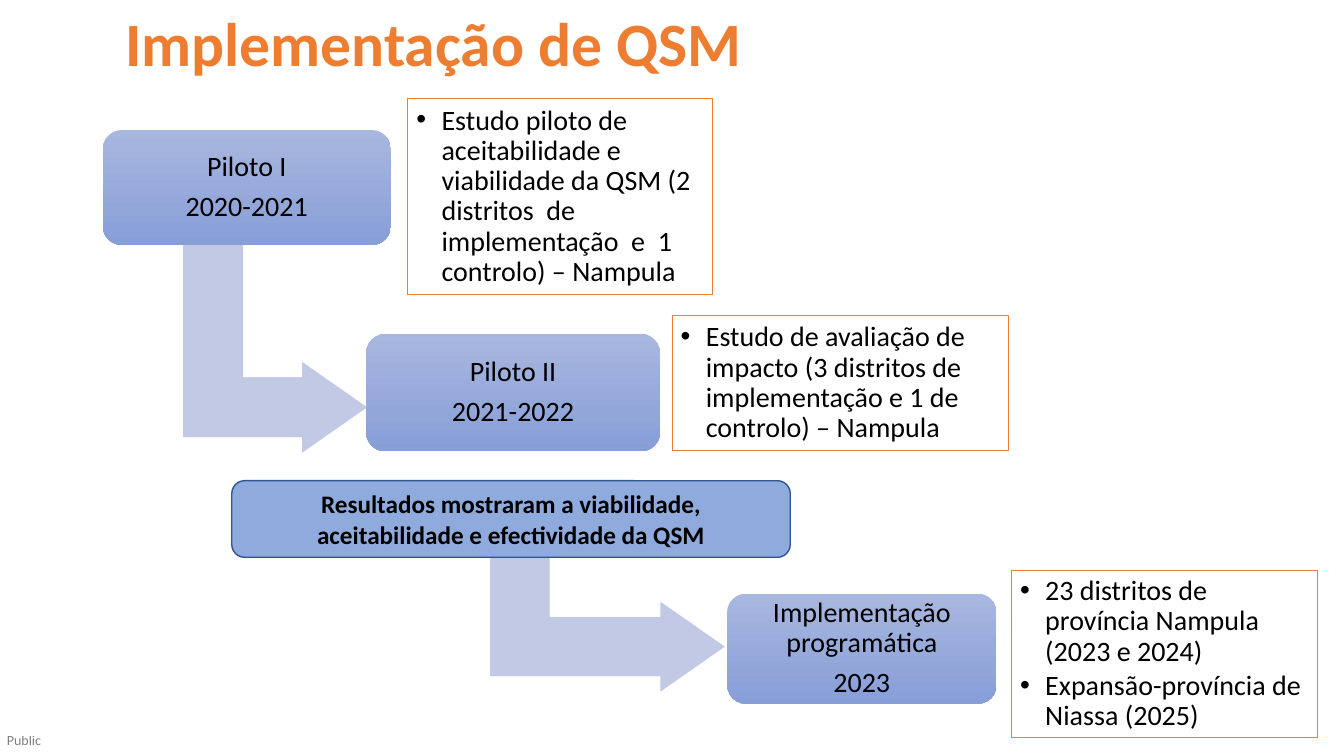
from dataclasses import dataclass

from lxml import etree
from pptx import Presentation
from pptx.dml.color import RGBColor
from pptx.enum.shapes import MSO_SHAPE
from pptx.enum.text import MSO_ANCHOR, MSO_AUTO_SIZE, PP_ALIGN
from pptx.oxml.ns import qn
from pptx.util import Pt

ROUNDED = MSO_SHAPE.ROUNDED_RECTANGLE
RECTANGLE = MSO_SHAPE.RECTANGLE
BENT_ARROW = MSO_SHAPE.BENT_UP_ARROW
TOP, MIDDLE = MSO_ANCHOR.TOP, MSO_ANCHOR.MIDDLE
LEFT, CENTER = PP_ALIGN.LEFT, PP_ALIGN.CENTER
NO_AUTOFIT = MSO_AUTO_SIZE.NONE

FONT = "Calibri"
COLORS = {
    "text": "000000",
    "accent": "ED7D31",
    "arrow": "C1C9E4",
    "arrow_edge": "FFFFFF",
    "stage_top": "A8B7DF",
    "stage_bottom": "889ED7",
    "result": "8FAADC",
    "result_edge": "325491",
}


@dataclass
class Box:
    left: float
    top: float
    width: float
    height: float

    def lengths(self) -> tuple:
        return Pt(self.left), Pt(self.top), Pt(self.width), Pt(self.height)


@dataclass
class Stage:
    box: Box
    lines: list[str]
    note_box: Box
    notes: list[str]


STAGES = [
    Stage(Box(73.4, 92.9, 205.9, 82.1), ["Piloto I", "2020-2021"],
          Box(291.4, 70.6, 217.4, 139.7),
          ["Estudo piloto de aceitabilidade e viabilidade da QSM (2 distritos  de "
           "implementação  e  1 controlo) – Nampula"]),
    Stage(Box(261.4, 238.3, 210.2, 84.2), ["Piloto II", "2021-2022"],
          Box(480.2, 225.4, 240.5, 96.5),
          ["Estudo de avaliação de impacto (3 distritos de implementação e 1 de "
           "controlo) – Nampula"]),
    Stage(Box(519.6, 424.1, 192.2, 78.5), ["Implementação programática", "2023"],
          Box(722.6, 407.5, 218.2, 119.5),
          ["23 distritos de província Nampula (2023 e 2024)",
           "Expansão-província de Niassa (2025)"]),
]
ARROWS = [Box(121.7, 182.9, 149.8, 132.5), Box(368.6, 344.9, 131, 168.5)]
RESULT_BOX = Box(165.6, 343.4, 398.9, 54.7)


def rgb(name: str) -> RGBColor:
    return RGBColor.from_string(COLORS[name])


def set_frame(tf, inset: float, anchor) -> None:
    tf.word_wrap = True
    tf.auto_size = NO_AUTOFIT
    tf.vertical_anchor = anchor
    tf.margin_left = tf.margin_right = Pt(inset)
    tf.margin_top = tf.margin_bottom = Pt(min(inset, 6))


def add_run(p, text: str, size: float, color: str = "text", bold: bool = False):
    r = p.add_run()
    r.text = text
    r.font.name = FONT
    r.font.size = Pt(size)
    r.font.bold = bold
    r.font.color.rgb = rgb(color)
    return r


def add_bullet(p) -> None:
    pPr = p._p.get_or_add_pPr()
    pPr.set("marL", str(Pt(18)))
    pPr.set("indent", str(-Pt(18)))
    etree.SubElement(pPr, qn("a:buFont")).set("typeface", "Arial")
    etree.SubElement(pPr, qn("a:buChar")).set("char", "•")


def add_box(slide, kind, box: Box):
    sp = slide.shapes.add_shape(kind, *box.lengths())
    sp.shadow.inherit = False
    return sp


def fill_paragraphs(tf, lines: list[str], align, after: float, bulleted: bool) -> None:
    for i, line in enumerate(lines):
        p = tf.add_paragraph() if i else tf.paragraphs[0]
        p.alignment = align
        p.line_spacing = 0.9
        p.space_after = Pt(after if i < len(lines) - 1 else 0)
        if bulleted:
            add_bullet(p)
        add_run(p, line, 20)


def add_arrow(slide, box: Box) -> None:
    sp = add_box(slide, BENT_ARROW, box)
    sp.rotation = 90
    for i, value in enumerate((0.328, 0.25, 0.358)):
        sp.adjustments[i] = value
    sp.fill.solid()
    sp.fill.fore_color.rgb = rgb("arrow")
    sp.line.color.rgb = rgb("arrow_edge")
    sp.line.width = Pt(0.5)


def add_stage(slide, stage: Stage) -> None:
    sp = add_box(slide, ROUNDED, stage.box)
    sp.fill.gradient()
    sp.fill.gradient_angle = 270
    for stop, color in zip(sp.fill.gradient_stops, ("stage_top", "stage_bottom")):
        stop.color.rgb = rgb(color)
    sp.line.fill.background()
    set_frame(sp.text_frame, 6, MIDDLE)
    fill_paragraphs(sp.text_frame, stage.lines, CENTER, 7, False)

    note = add_box(slide, RECTANGLE, stage.note_box)
    note.fill.background()
    note.line.color.rgb = rgb("accent")
    note.line.width = Pt(0.75)
    set_frame(note.text_frame, 6, MIDDLE)
    fill_paragraphs(note.text_frame, stage.notes, LEFT, 3, True)


def add_result(slide) -> None:
    sp = add_box(slide, ROUNDED, RESULT_BOX)
    sp.fill.solid()
    sp.fill.fore_color.rgb = rgb("result")
    sp.line.color.rgb = rgb("result_edge")
    sp.line.width = Pt(1)
    set_frame(sp.text_frame, 10, MIDDLE)
    p = sp.text_frame.paragraphs[0]
    p.alignment = CENTER
    add_run(p, "Resultados mostraram a viabilidade, aceitabilidade e efectividade da QSM",
            18, bold=True)


def add_title(slide) -> None:
    title = slide.shapes.title
    title.left, title.top, title.width, title.height = Box(82.1, 0, 771.1, 60.5).lengths()
    set_frame(title.text_frame, 7.2, TOP)
    title.text_frame.margin_top = title.text_frame.margin_bottom = Pt(3.6)
    p = title.text_frame.paragraphs[0]
    p.alignment = LEFT
    add_run(p, "Implementação de QSM", 44, "accent", True)


def add_label(slide) -> None:
    sp = slide.shapes.add_textbox(*Box(5, 522.7, 30, 12.2).lengths())
    set_frame(sp.text_frame, 0, TOP)
    sp.text_frame.word_wrap = False
    r = add_run(sp.text_frame.paragraphs[0], "Public", 10)
    color = r._r.find(".//" + qn("a:srgbClr"))
    etree.SubElement(color, qn("a:alpha")).set("val", "50000")


def main() -> None:
    prs = Presentation()
    prs.slide_width, prs.slide_height = Pt(960), Pt(540)
    s = prs.slides.add_slide(prs.slide_layouts[5])
    add_title(s)
    add_label(s)
    for box in ARROWS:
        add_arrow(s, box)
    for stage in STAGES:
        add_stage(s, stage)
    add_result(s)
    prs.save("out.pptx")


if __name__ == "__main__":
    main()
